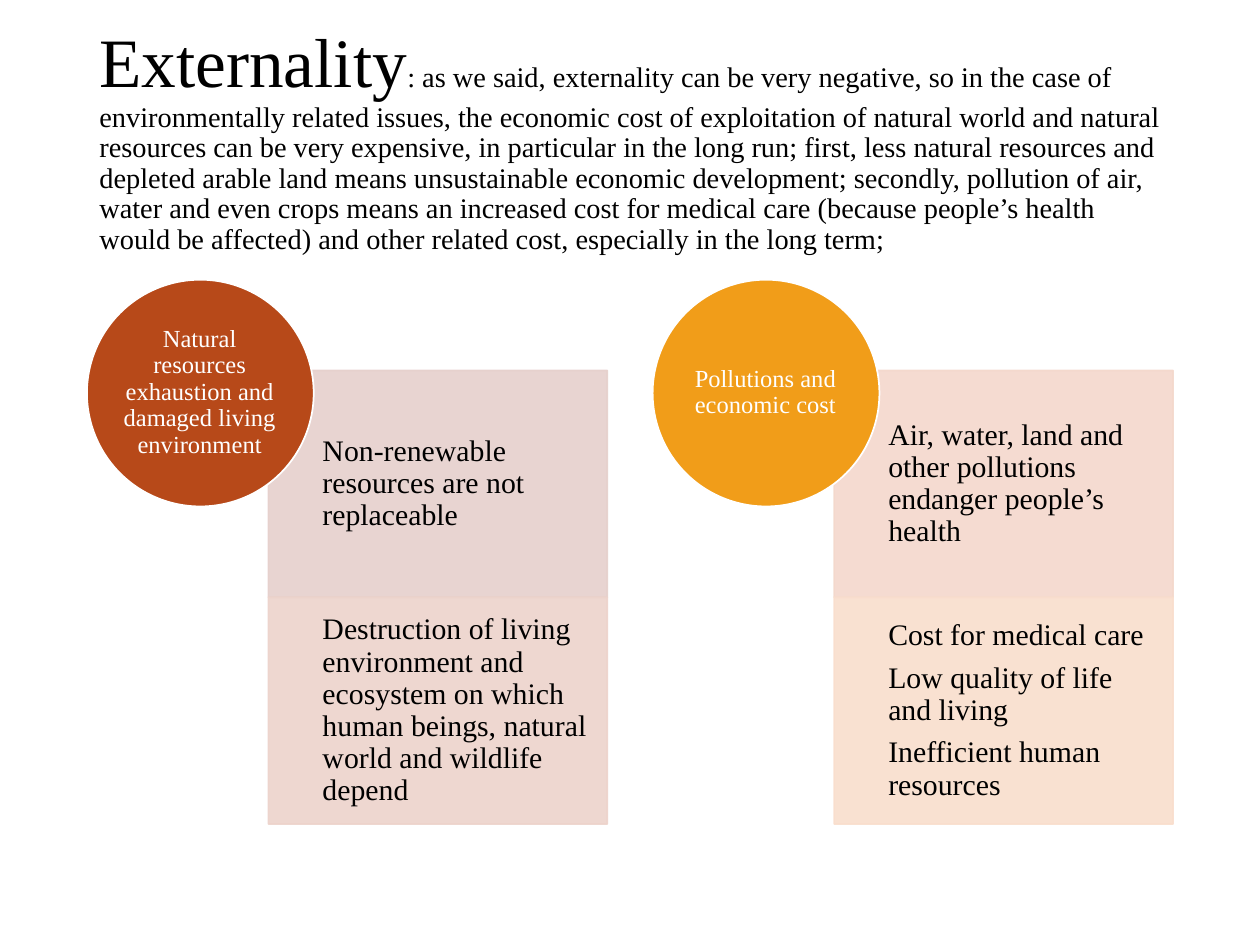
from lxml import etree
from pptx import Presentation
from pptx.dml.color import RGBColor
from pptx.enum import shapes, text
from pptx.oxml.ns import qn
from pptx.util import Inches, Pt

FONT = "Times New Roman"
BLACK = RGBColor(0x00, 0x00, 0x00)
WHITE = RGBColor(0xFF, 0xFF, 0xFF)
RUST = RGBColor(0xB7, 0x49, 0x19)
ORANGE = RGBColor(0xF1, 0x9D, 0x19)
ROSE = RGBColor(0xE6, 0xD0, 0xCC)
BLUSH = RGBColor(0xED, 0xD3, 0xCB)
PEACH = RGBColor(0xF4, 0xD8, 0xCC)
CREAM = RGBColor(0xF9, 0xDE, 0xCD)

TOPICS_LEFT, TOPIC_STEP = 0.69, 4.49
CIRCLE_TOP, CIRCLE_SIZE = 2.22, 1.8
PANELS_TOP, PANEL_WIDTH, PANEL_HEIGHT = 2.94, 2.69, 1.8

prs = Presentation()
prs.slide_width, prs.slide_height = Inches(10), Inches(7.5)
slide = prs.slides.add_slide(prs.slide_layouts[6])


def add_block(preset, left, top, width, height, fill, line, alpha=100):
    block = slide.shapes.add_shape(
        preset, Inches(left), Inches(top), Inches(width), Inches(height))
    block.shadow.inherit = False
    block.fill.solid()
    block.fill.fore_color.rgb = fill
    block.line.color.rgb = line
    block.line.width = Pt(1)
    if alpha < 100:
        for color in block._element.spPr.iter(qn("a:srgbClr")):
            etree.SubElement(color, qn("a:alpha"), val=str(alpha * 1000))


def add_text(left, top, width, height, paragraphs, size, color, margins, align, after):
    box = slide.shapes.add_textbox(
        Inches(left), Inches(top), Inches(width), Inches(height))
    frame = box.text_frame
    frame.word_wrap = True
    frame.vertical_anchor = text.MSO_ANCHOR.MIDDLE
    (frame.margin_left, frame.margin_top,
     frame.margin_right, frame.margin_bottom) = [Inches(m) for m in margins]
    frame.text = "\n".join(paragraphs)
    for paragraph in frame.paragraphs:
        paragraph.alignment = align
        paragraph.line_spacing = 0.9
        paragraph.space_after = Pt(after)
        paragraph.font.name = FONT
        paragraph.font.size = Pt(size)
        paragraph.font.color.rgb = color
    return frame


# Heading: a large key word followed by its explanation
heading = add_text(
    0.69, 0.4, 8.62, 1.45, ["Externality"], 16.2, BLACK,
    (0.1, 0.05, 0.1, 0.05), text.PP_ALIGN.LEFT, 0).paragraphs[0]
heading.runs[0].font.size = Pt(39.6)
heading.add_run().text = (
    ": as we said, externality can be very negative, so in the case of "
    "environmentally related issues, the economic cost of exploitation of natural "
    "world and natural resources can be very expensive, in particular in the long "
    "run; first, less natural resources and depleted arable land means "
    "unsustainable economic development; secondly, pollution of air, water and "
    "even crops means an increased cost for medical care (because people’s health "
    "would be affected) and other related cost, especially in the long term;")

# Topics: circle label, circle colour, then the panels below it
topics = [
    ("Natural resources exhaustion and damaged living environment", RUST, [
        (ROSE, ["Non-renewable resources are not replaceable"]),
        (BLUSH, ["Destruction of living environment and ecosystem on which "
                 "human beings, natural world and wildlife depend"]),
    ]),
    ("Pollutions and economic cost", ORANGE, [
        (PEACH, ["Air, water, land and other pollutions endanger people’s health"]),
        (CREAM, ["Cost for medical care", "Low quality of life and living",
                 "Inefficient human resources"]),
    ]),
]

for column, (label, circle_color, panels) in enumerate(topics):
    left = TOPICS_LEFT + column * TOPIC_STEP

    # Stacked panels
    for row, (panel_color, points) in enumerate(panels):
        top = PANELS_TOP + row * PANEL_HEIGHT
        add_block(shapes.MSO_SHAPE.RECTANGLE, left + 1.44, top,
                  PANEL_WIDTH, PANEL_HEIGHT, panel_color, panel_color, alpha=90)
        add_text(left + 1.87, top, 2.26, PANEL_HEIGHT, points, 17, BLACK,
                 (0, 0.13, 0.13, 0.13), text.PP_ALIGN.LEFT, 6)

    # Circle overlapping the first panel
    add_block(shapes.MSO_SHAPE.OVAL, left, CIRCLE_TOP,
              CIRCLE_SIZE, CIRCLE_SIZE, circle_color, WHITE)
    add_text(left + 0.26, CIRCLE_TOP + 0.26, 1.27, 1.27, [label], 14, WHITE,
             (0, 0, 0, 0), text.PP_ALIGN.CENTER, 5)

prs.save("out.pptx")
